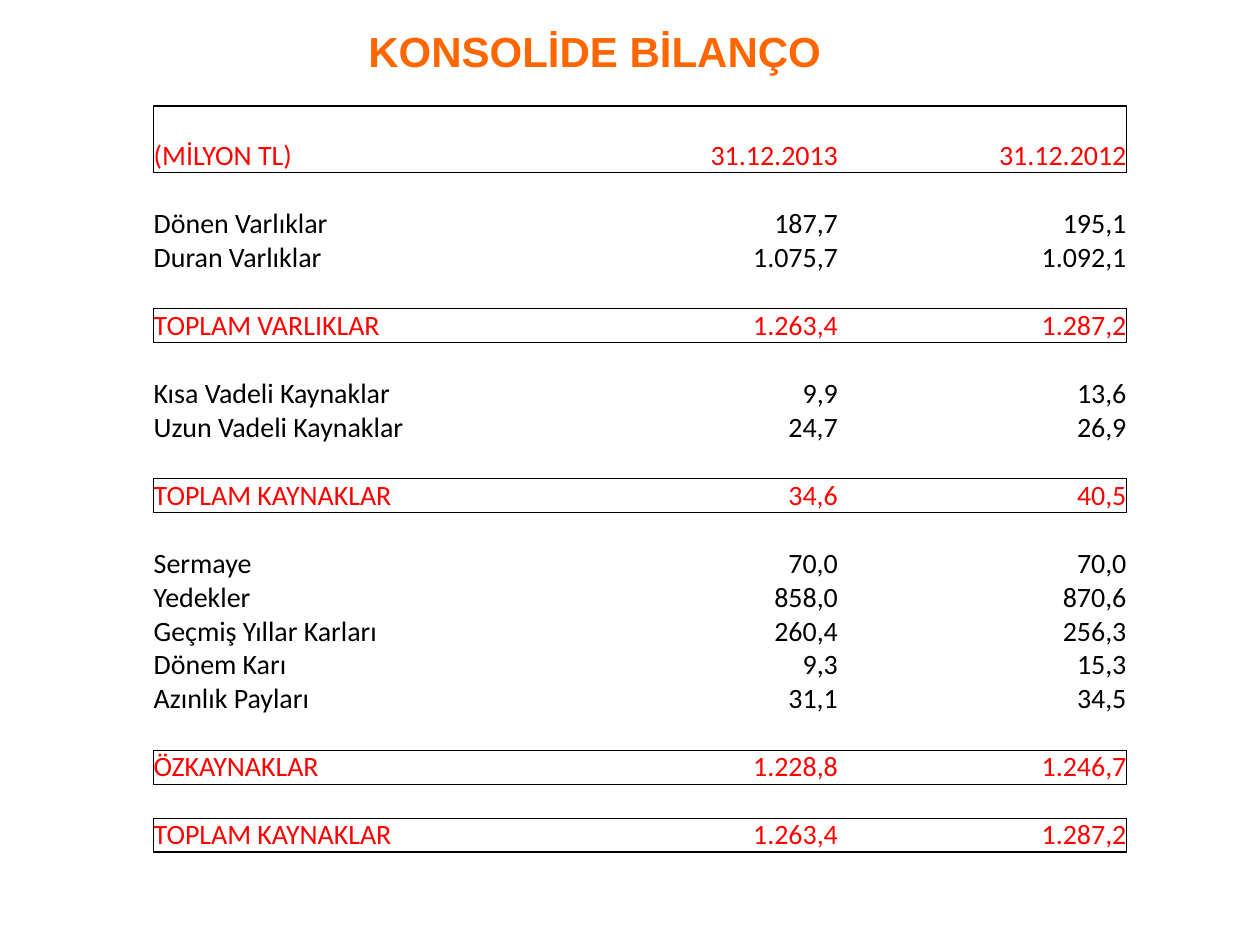
from lxml.etree import SubElement
from pptx import Presentation
from pptx.dml.color import RGBColor
from pptx.enum.text import MSO_ANCHOR, PP_ALIGN
from pptx.oxml import parse_xml
from pptx.oxml.ns import nsdecls, qn
from pptx.util import Inches, Pt

COLORS = {"title": "FF6600", "total": "FF0000", "item": "000000", "border": "000000"}

COL_WIDTHS = [3.35, 0.6, 1.48, 0.41, 1.88]
HEADER_HEIGHT, ROW_HEIGHT = 0.53, 0.27
TEXT_COLS = (0, 2, 4)

# Each block of items is closed by a boxed total
HEADER = ("(MİLYON TL)", "31.12.2013", "31.12.2012")
BLOCKS = [
    ([("Dönen Varlıklar", "187,7", "195,1"),
      ("Duran Varlıklar", "1.075,7", "1.092,1")],
     ("TOPLAM VARLIKLAR", "1.263,4", "1.287,2")),
    ([("Kısa Vadeli Kaynaklar", "9,9", "13,6"),
      ("Uzun Vadeli Kaynaklar", "24,7", "26,9")],
     ("TOPLAM KAYNAKLAR", "34,6", "40,5")),
    ([("Sermaye", "70,0", "70,0"),
      ("Yedekler", "858,0", "870,6"),
      ("Geçmiş Yıllar Karları", "260,4", "256,3"),
      ("Dönem Karı", "9,3", "15,3"),
      ("Azınlık Payları", "31,1", "34,5")],
     ("ÖZKAYNAKLAR", "1.228,8", "1.246,7")),
    ([], ("TOPLAM KAYNAKLAR", "1.263,4", "1.287,2")),
]


def layout_rows():
    """Return (texts, boxed) for every table row, with blank rows as gaps."""
    gap = (None, False)
    rows = [(HEADER, True)]
    for items, total in BLOCKS:
        rows.append(gap)
        if items:
            rows += [(item, False) for item in items] + [gap]
        rows.append((total, True))
    return rows


def add_run(p, text, font, size, color, bold=False):
    r = p.add_run()
    r.text = text
    r.font.name = font
    r.font.size = Pt(size)
    r.font.bold = bold
    r.font.color.rgb = RGBColor.from_string(COLORS[color])


def add_title(s, text):
    sp = s.shapes.add_textbox(Inches(-0.28), Inches(0.15), Inches(10), Inches(0.5))
    tf = sp.text_frame
    tf.word_wrap = True
    p = tf.paragraphs[0]
    p.alignment = PP_ALIGN.CENTER
    add_run(p, text, "Arial", 24, "title", bold=True)


def set_borders(cell, sides):
    """Draw the named sides (L, R, T, B) and clear the others."""
    tc_pr = cell._tc.get_or_add_tcPr()
    for i, side in enumerate("LRTB"):
        if side in sides:
            fill = f'<a:solidFill><a:srgbClr val="{COLORS["border"]}"/></a:solidFill>'
        else:
            fill = "<a:noFill/>"
        tc_pr.insert(i, parse_xml(
            f'<a:ln{side} {nsdecls("a")} w="{Pt(1)}">{fill}</a:ln{side}>'))


def fill_cell(cell, text, color, align):
    cell.fill.background()
    cell.margin_left = cell.margin_right = cell.margin_top = cell.margin_bottom = 0
    cell.vertical_anchor = MSO_ANCHOR.BOTTOM
    p = cell.text_frame.paragraphs[0]
    if text:
        p.alignment = align
        add_run(p, text, "Calibri", 16, color)
    else:
        # Small end mark, so that a blank cell does not stretch its row
        SubElement(p._p, qn("a:endParaRPr")).set("sz", "1000")


def add_balance_table(s, rows):
    height = HEADER_HEIGHT + ROW_HEIGHT * (len(rows) - 1)
    table = s.shapes.add_table(len(rows), len(COL_WIDTHS), Inches(1.22), Inches(0.84),
                               Inches(sum(COL_WIDTHS)), Inches(height)).table
    table.first_row = table.horz_banding = False
    for col, width in zip(table.columns, COL_WIDTHS):
        col.width = Inches(width)

    boxed_rows = {i for i, (_, boxed) in enumerate(rows) if boxed}
    last_col = len(COL_WIDTHS) - 1
    for i, (texts, boxed) in enumerate(rows):
        table.rows[i].height = Inches(ROW_HEIGHT if i else HEADER_HEIGHT)
        by_col = dict(zip(TEXT_COLS, texts or ()))
        # Edges shared with a boxed row are drawn from both sides
        edges = "T" if boxed_rows & {i, i - 1} else ""
        edges += "B" if boxed_rows & {i, i + 1} else ""
        for j in range(len(COL_WIDTHS)):
            cell = table.cell(i, j)
            fill_cell(cell, by_col.get(j), "total" if boxed else "item",
                      PP_ALIGN.RIGHT if j else PP_ALIGN.LEFT)
            ends = {0: "L", last_col: "R"}.get(j, "") if boxed else ""
            set_borders(cell, edges + ends)


def main():
    prs = Presentation()
    prs.slide_width, prs.slide_height = Inches(10), Inches(7.5)
    s = prs.slides.add_slide(prs.slide_layouts[6])
    add_title(s, "KONSOLİDE BİLANÇO")
    add_balance_table(s, layout_rows())
    prs.save("out.pptx")


if __name__ == "__main__":
    main()
